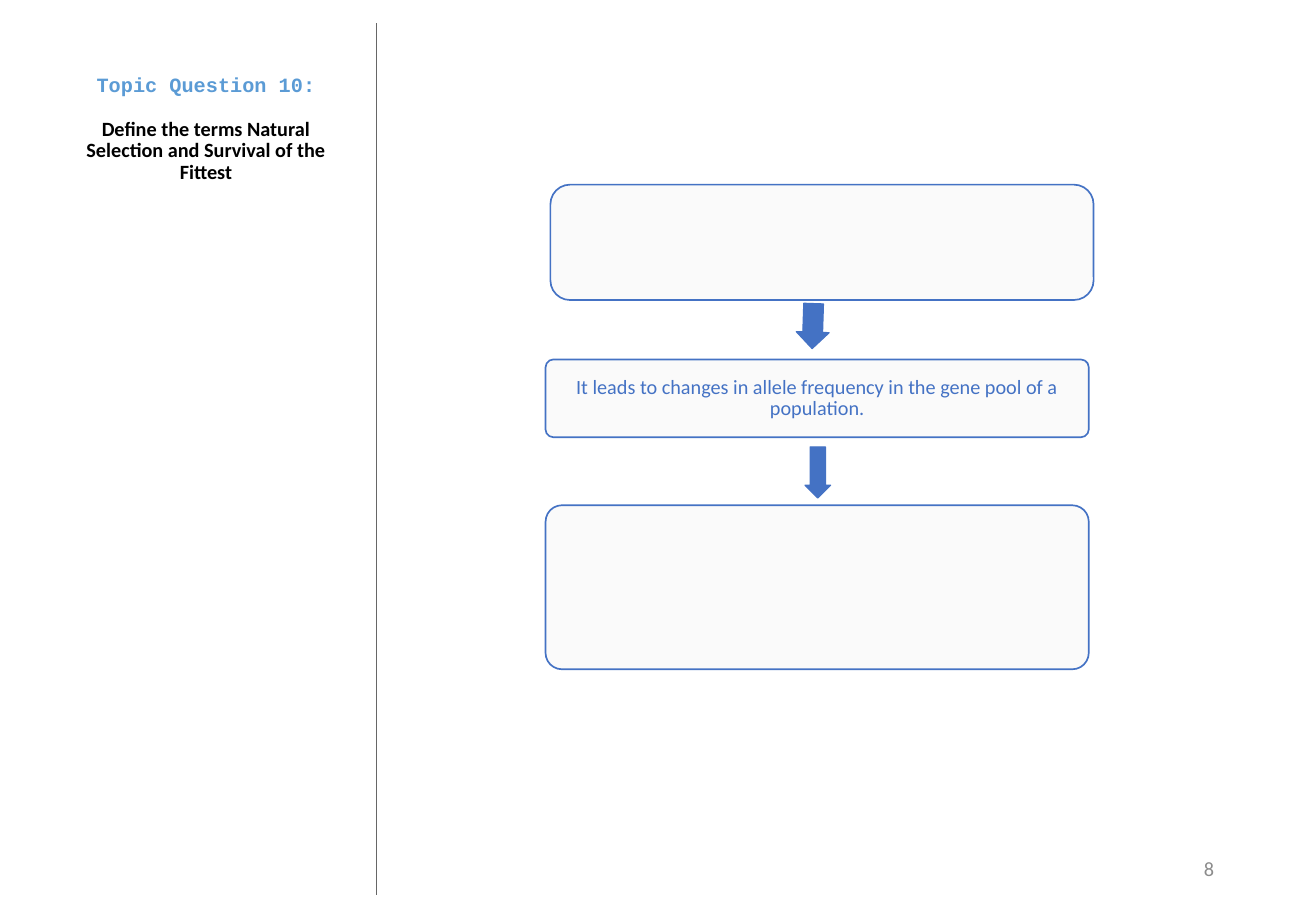
from dataclasses import dataclass
from lxml.etree import SubElement
from pptx import Presentation
from pptx.dml.color import RGBColor
from pptx.enum.shapes import MSO_CONNECTOR, MSO_SHAPE
from pptx.enum.text import MSO_ANCHOR, MSO_AUTO_SIZE, PP_ALIGN
from pptx.oxml.ns import qn
from pptx.util import Inches, Pt


@dataclass(frozen=True)
class Theme:
    """Colours, fonts and sizes of the slide."""
    blue: str = "4472C4"
    sky: str = "5B9BD5"
    pale: str = "FAFAFA"
    ink: str = "000000"
    grey: str = "8C8C8C"
    rule: str = "666666"
    body: str = "Calibri"
    mono: str = "Courier New"
    size: int = 12


THEME = Theme()


def style(para, color, font=THEME.body, bold=False, align=PP_ALIGN.CENTER):
    """Set the font and alignment of a paragraph."""
    para.alignment = align
    para.font.name = font
    para.font.size = Pt(THEME.size)
    para.font.bold = bold
    para.font.color.rgb = RGBColor.from_string(color)


def add_block(slide, kind, box, fill, width):
    """Add a filled shape with a blue edge."""
    shape = slide.shapes.add_shape(kind, *map(Inches, box))
    shape.shadow.inherit = False
    shape.fill.solid()
    shape.fill.fore_color.rgb = RGBColor.from_string(fill)
    shape.line.color.rgb = RGBColor.from_string(THEME.blue)
    shape.line.width = Pt(width)
    return shape


def add_card(slide, box, curve, text=""):
    """Add a rounded card with optional centred text."""
    card = add_block(slide, MSO_SHAPE.ROUNDED_RECTANGLE, box, THEME.pale, 1)
    card.adjustments[0] = curve
    if text:
        frame = card.text_frame
        frame.word_wrap = True
        frame.vertical_anchor = MSO_ANCHOR.MIDDLE
        frame.margin_left = frame.margin_right = Inches(0.07)
        para = frame.paragraphs[0]
        para.text = text
        para.line_spacing = 0.9
        style(para, THEME.blue)


def add_arrow(slide, box, turn=0):
    """Add a downward arrow."""
    arrow = add_block(slide, MSO_SHAPE.DOWN_ARROW, box, THEME.blue, 0.75)
    arrow.adjustments[0] = 0.6
    arrow.adjustments[1] = 0.5
    arrow.rotation = turn


def add_flow(slide, left, top, width):
    """Stack three cards joined by two arrows."""
    mid = left + width / 2
    add_card(slide, (left + 0.04, top, width, 0.95), 0.17)
    add_arrow(slide, (mid - 0.17, top + 0.98, 0.27, 0.37), 1.9)
    add_card(slide, (left, top + 1.44, width, 0.64), 0.1,
             "It leads to changes in allele frequency in the gene pool of a population.")
    add_arrow(slide, (mid - 0.1, top + 2.16, 0.21, 0.42))
    add_card(slide, (left, top + 2.64, width, 1.35), 0.1)


def add_topic(slide, box):
    """Fill the title with the topic and its question."""
    title = slide.shapes.title
    title.left, title.top, title.width, title.height = map(Inches, box)
    frame = title.text_frame
    frame.word_wrap = True
    frame.auto_size = MSO_AUTO_SIZE.NONE
    frame.vertical_anchor = MSO_ANCHOR.MIDDLE
    head = frame.paragraphs[0]
    head.text = "Topic Question 10:"
    style(head, THEME.sky, THEME.mono, True)
    task = frame.add_paragraph()
    task.text = "Define the terms Natural Selection and Survival of the Fittest"
    style(task, THEME.ink, bold=True)
    task.space_before = Pt(13)
    for para in (head, task):
        para.line_spacing = 0.9


def add_rule(slide, left, top, height):
    """Draw the upright rule beside the topic."""
    ends = map(Inches, (left, top, left, top + height))
    rule = slide.shapes.add_connector(MSO_CONNECTOR.STRAIGHT, *ends)
    rule.line.color.rgb = RGBColor.from_string(THEME.rule)
    rule.line.width = Pt(0.5)
    SubElement(rule._element.spPr, qn("a:effectLst"))


def add_number(slide, box, number):
    """Place the slide number at the right of its box."""
    frame = slide.shapes.add_textbox(*map(Inches, box)).text_frame
    frame.word_wrap = True
    frame.vertical_anchor = MSO_ANCHOR.MIDDLE
    para = frame.paragraphs[0]
    para.text = str(number)
    style(para, THEME.grey, align=PP_ALIGN.RIGHT)


def main():
    """Build and save the slide."""
    deck = Presentation()
    deck.slide_width, deck.slide_height = Inches(10.83), Inches(7.5)
    slide = deck.slides.add_slide(deck.slide_layouts[5])
    add_rule(slide, 3.1, 0.19, 7.18)
    add_topic(slide, (0.52, 0.69, 2.35, 0.75))
    add_flow(slide, 4.49, 1.52, 4.47)
    add_number(slide, (7.65, 6.95, 2.44, 0.4), 8)
    deck.save("out.pptx")


if __name__ == "__main__":
    main()
